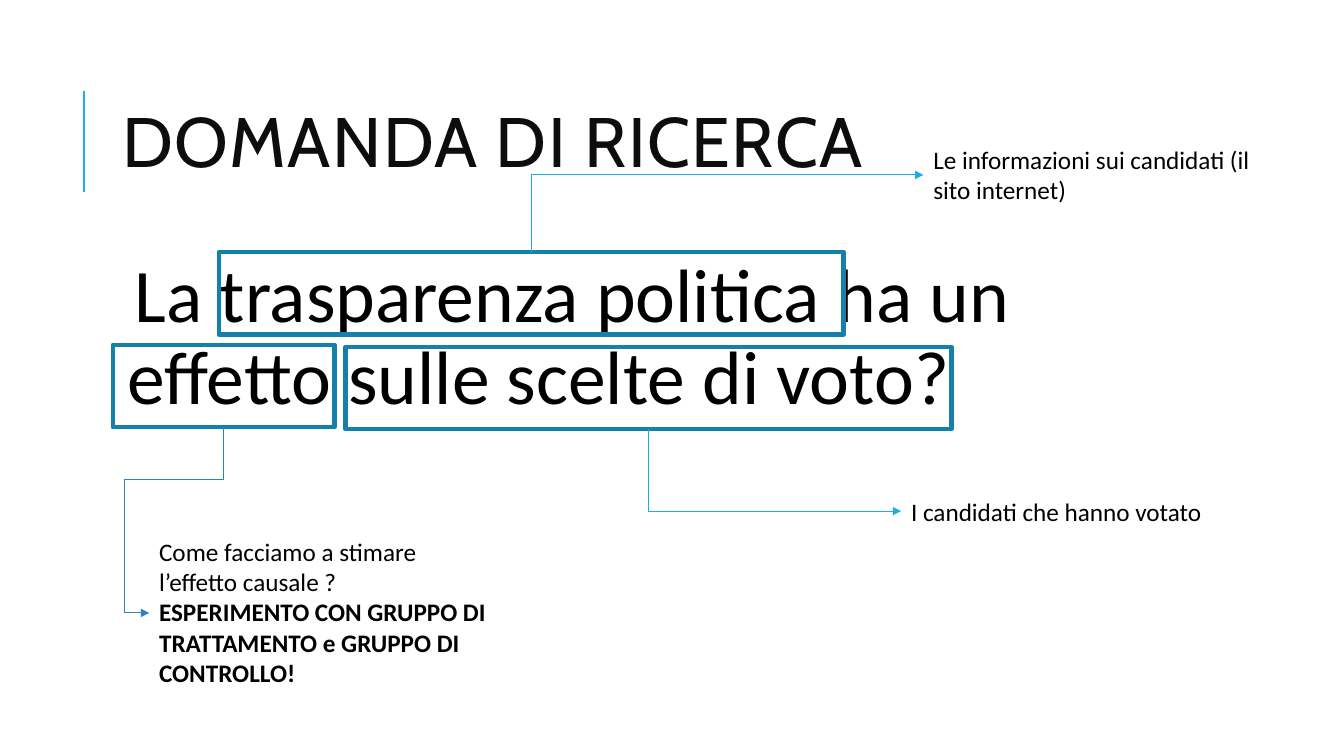
"""Build the research question slide with its three annotated key phrases."""
from lxml.etree import SubElement
from pptx import Presentation
from pptx.dml.color import RGBColor
from pptx.enum.shapes import MSO_CONNECTOR, MSO_SHAPE
from pptx.enum.text import MSO_ANCHOR, MSO_AUTO_SIZE, PP_ALIGN
from pptx.oxml.ns import qn
from pptx.util import Cm, Pt

TITLE = "DOMANDA DI RICERCA"
QUESTION = "La trasparenza politica ha un effetto sulle scelte di voto?"
TITLE_BOX = (2.84, 1.63, 27, 4.17)
QUESTION_BOX = (2.84, 6.35, 27, 11.18)
ACCENT, FRAME, BLACK = "1CADE4", "1580A9", "000000"
NOTES = [
    {
        "frame": (5.51, 6.35, 15.75, 2.08),
        "note": (23.27, 3.51, 9.02, 1.8),
        "lines": [("Le informazioni sui candidati (il sito internet)", False)],
        "side": "top", "color": ACCENT, "preset": "bentConnector2",
        "rotation": 90, "flips": (True, True), "bends": [],
    },
    {
        "frame": (8.71, 8.74, 15.27, 2.08),
        "note": (22.71, 12.37, 9.02, 1.02),
        "lines": [("I candidati che hanno votato", False)],
        "side": "bottom", "color": ACCENT, "preset": "bentConnector2",
        "rotation": 270, "flips": (True, False), "bends": [],
    },
    {
        "frame": (2.84, 8.69, 5.59, 2.08),
        "note": (3.76, 13.39, 9.02, 4.11),
        "lines": [
            ("Come facciamo a stimare l’effetto causale ?", False),
            ("ESPERIMENTO CON GRUPPO DI TRATTAMENTO e GRUPPO DI CONTROLLO!", True),
        ],
        "side": "bottom", "color": "2683C6", "preset": "bentConnector4",
        "rotation": 90, "flips": (False, False), "bends": [28100, 133800],
    },
]


def rgb(color):
    return RGBColor.from_string(color)


def lengths(values):
    return [Cm(value) for value in values]


def place(shape, box):
    shape.left, shape.top, shape.width, shape.height = lengths(box)


def set_font(paragraph, name, size, color, bold=False):
    font = paragraph.font
    font.name, font.size, font.bold = name, Pt(size), bold
    font.color.rgb = rgb(color)


def add_line(slide, kind, points, color, width):
    connector = slide.shapes.add_connector(kind, *lengths(points))
    connector.line.color.rgb = rgb(color)
    connector.line.width = Pt(width)
    SubElement(connector.element.spPr, qn("a:effectLst"))
    return connector


def add_title(slide):
    title = slide.shapes.title
    place(title, TITLE_BOX)
    title.text_frame.text = TITLE
    title.text_frame.vertical_anchor = MSO_ANCHOR.MIDDLE
    title.text_frame.auto_size = MSO_AUTO_SIZE.NONE
    paragraph = title.text_frame.paragraphs[0]
    paragraph.alignment = PP_ALIGN.LEFT
    paragraph.line_spacing = 0.8
    set_font(paragraph, "Cabin", 50, "0D0D0D")
    paragraph.runs[0].font._element.set("spc", "100")


def add_question(slide):
    body = slide.placeholders[1]
    place(body, QUESTION_BOX)
    frame = body.text_frame
    frame.text = QUESTION
    frame.auto_size = MSO_AUTO_SIZE.NONE
    frame.margin_left = frame.margin_right = Cm(0.13)
    frame.margin_top = frame.margin_bottom = Cm(0.13)
    paragraph = frame.paragraphs[0]
    properties = paragraph._p.get_or_add_pPr()
    properties.set("marL", str(Cm(0.25)))
    properties.set("indent", str(Cm(-0.25)))
    bullet_color = SubElement(properties, qn("a:buClr"))
    SubElement(bullet_color, qn("a:srgbClr"), val=ACCENT)
    SubElement(properties, qn("a:buFont"), typeface="Calibri")
    SubElement(properties, qn("a:buChar"), char=" ")
    paragraph.line_spacing = 0.9
    paragraph.space_before, paragraph.space_after = Pt(0), Pt(2)
    set_font(paragraph, "Calibri", 54, BLACK)


def add_frame(slide, box):
    frame = slide.shapes.add_shape(MSO_SHAPE.RECTANGLE, *lengths(box))
    frame.shadow.inherit = False
    frame.fill.background()
    frame.line.color.rgb = rgb(FRAME)
    frame.line.width = Pt(3)


def add_note(slide, box, lines):
    frame = slide.shapes.add_textbox(*lengths(box)).text_frame
    frame.word_wrap = True
    frame.auto_size = MSO_AUTO_SIZE.SHAPE_TO_FIT_TEXT
    for index, (text, bold) in enumerate(lines):
        paragraph = frame.add_paragraph() if index else frame.paragraphs[0]
        paragraph.text = text
        set_font(paragraph, "Calibri", 18, BLACK, bold)


def add_arrow(slide, item):
    left, top, width, height = item["frame"]
    start_x = left + width / 2
    start_y = top if item["side"] == "top" else top + height
    end_x = item["note"][0]
    end_y = item["note"][1] + item["note"][3] / 2
    center_x, center_y = (start_x + end_x) / 2, (start_y + end_y) / 2
    half_width, half_height = abs(end_y - start_y) / 2, abs(end_x - start_x) / 2
    across, down = [-1 if flip else 1 for flip in item["flips"]]
    points = (
        center_x - across * half_width, center_y - down * half_height,
        center_x + across * half_width, center_y + down * half_height,
    )
    arrow = add_line(slide, MSO_CONNECTOR.ELBOW, points, item["color"], 0.75)
    properties = arrow.element.spPr
    properties.find(qn("a:xfrm")).set("rot", str(item["rotation"] * 60000))
    geometry = properties.find(qn("a:prstGeom"))
    geometry.set("prst", item["preset"])
    adjustments = geometry.find(qn("a:avLst"))
    for number, bend in enumerate(item["bends"], 1):
        SubElement(adjustments, qn("a:gd"), name=f"adj{number}", fmla=f"val {bend}")
    SubElement(properties.find(qn("a:ln")), qn("a:tailEnd"), type="triangle")


def main():
    presentation = Presentation()
    presentation.slide_width, presentation.slide_height = Cm(33.87), Cm(19.05)
    slide = presentation.slides.add_slide(presentation.slide_layouts[1])
    add_line(slide, MSO_CONNECTOR.STRAIGHT, (2.11, 4.83, 2.11, 2.29), ACCENT, 1.5)
    add_title(slide)
    add_question(slide)
    for item in NOTES:
        add_frame(slide, item["frame"])
        add_note(slide, item["note"], item["lines"])
        add_arrow(slide, item)
    presentation.save("out.pptx")


if __name__ == "__main__":
    main()
